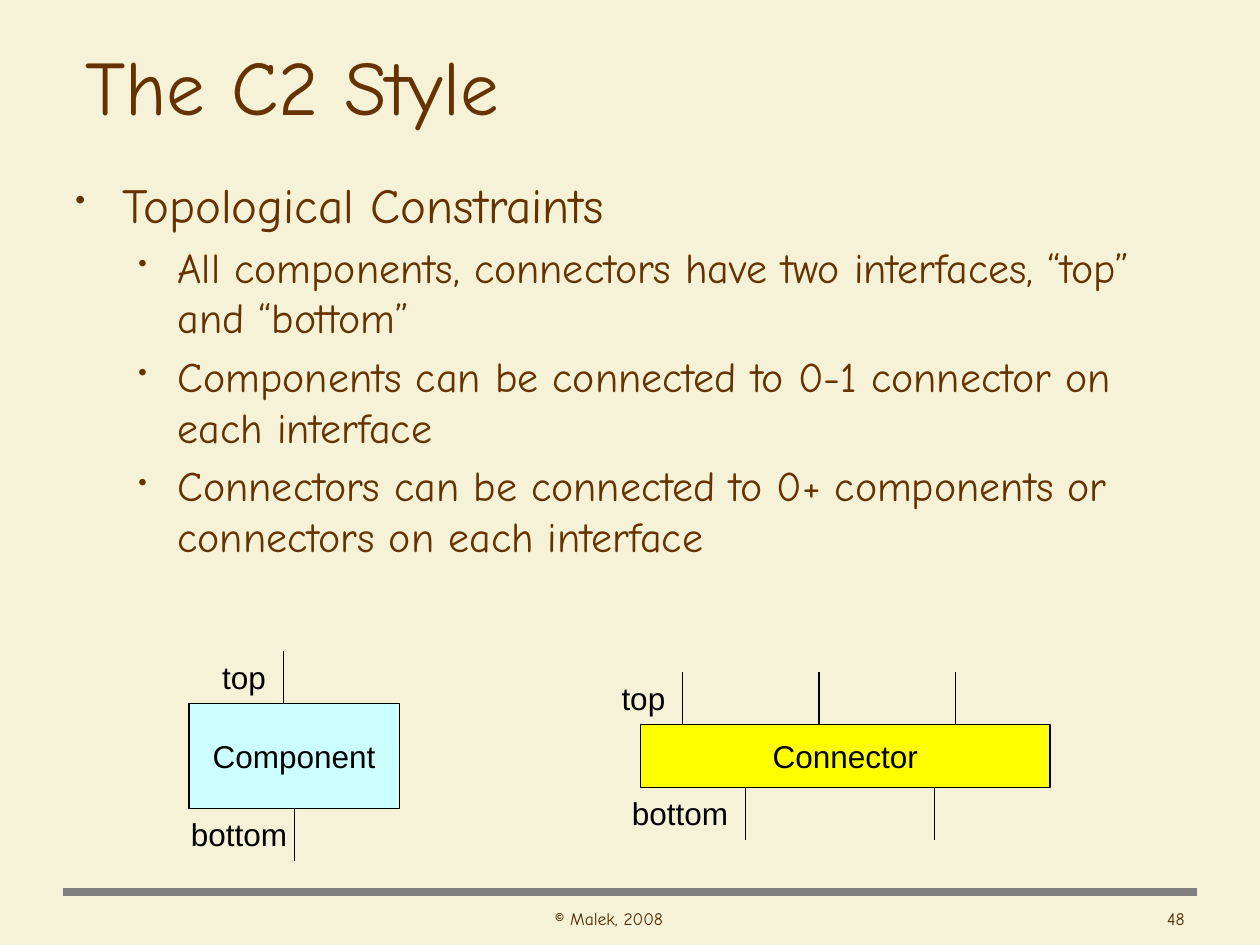
from dataclasses import dataclass

from lxml import etree
from pptx import Presentation
from pptx.dml.color import RGBColor
from pptx.enum.shapes import MSO_CONNECTOR, MSO_SHAPE
from pptx.enum.text import MSO_ANCHOR, PP_ALIGN
from pptx.oxml.ns import qn
from pptx.util import Cm, Pt

STRAIGHT = MSO_CONNECTOR.STRAIGHT
RECTANGLE = MSO_SHAPE.RECTANGLE
TOP, MIDDLE = MSO_ANCHOR.TOP, MSO_ANCHOR.MIDDLE
LEFT, CENTER, RIGHT = PP_ALIGN.LEFT, PP_ALIGN.CENTER, PP_ALIGN.RIGHT

CREAM = RGBColor(0xF5, 0xF2, 0xD8)
BROWN = RGBColor(0x66, 0x33, 0x00)
DARK_BROWN = RGBColor(0x50, 0x28, 0x00)
GRAY = RGBColor(0x80, 0x80, 0x80)
BLACK = RGBColor(0x00, 0x00, 0x00)
PALE_CYAN = RGBColor(0xCC, 0xFF, 0xFF)
YELLOW = RGBColor(0xFF, 0xFF, 0x00)

HAND_FONT = "Comic Neue"
PLAIN_FONT = "Arial"
STUB_LENGTH = 1.06
TOP_SIDE, BOTTOM_SIDE = 0, 2


@dataclass(frozen=True)
class TextStyle:
    size: float
    font: str
    color: RGBColor


@dataclass(frozen=True)
class BulletLevel:
    style: TextStyle
    margin: float
    hanging: float


@dataclass(frozen=True)
class Block:
    """A labelled box with interface stubs; lengths are centimetres."""
    name: str
    left: float
    top: float
    width: float
    height: float
    fill: RGBColor
    top_stubs: tuple[float, ...]
    bottom_stubs: tuple[float, ...]
    top_label_left: float
    bottom_label_left: float


TITLE = TextStyle(44, HAND_FONT, BROWN)
FOOTER = TextStyle(10, HAND_FONT, DARK_BROWN)
LABEL = TextStyle(18, PLAIN_FONT, BLACK)
LEVELS = (
    BulletLevel(TextStyle(28, HAND_FONT, BROWN), 0.95, 0.95),
    BulletLevel(TextStyle(24, HAND_FONT, BROWN), 2.06, 0.79),
)
BULLETS = (
    (0, "Topological Constraints"),
    (1, "All components, connectors have two interfaces, “top” and “bottom”"),
    (1, "Components can be connected to 0-1 connector on each interface"),
    (1, "Connectors can be connected to 0+ components or connectors on each interface"),
)
BLOCKS = (
    Block("Component", 3.81, 14.18, 4.24, 2.12, PALE_CYAN,
          (5.72,), (5.93,), 4.23, 3.6),
    Block("Connector", 12.91, 14.61, 8.26, 1.27, YELLOW,
          (13.76, 16.51, 19.26), (15.03, 18.84), 12.28, 12.49),
)


def add_span(para, text: str, style: TextStyle) -> None:
    span = para.add_run()
    span.text = text
    span.font.size = Pt(style.size)
    span.font.name = style.font
    span.font.color.rgb = style.color


def add_text_box(page, left: float, top: float, width: float, height: float,
                 anchor=TOP):
    box = page.shapes.add_textbox(Cm(left), Cm(top), Cm(width), Cm(height))
    box.text_frame.word_wrap = True
    box.text_frame.vertical_anchor = anchor
    return box.text_frame


def add_text(page, text: str, left: float, top: float, width: float,
             height: float, style: TextStyle, align=LEFT, anchor=TOP) -> None:
    para = add_text_box(page, left, top, width, height, anchor).paragraphs[0]
    para.alignment = align
    add_span(para, text, style)


def add_bullets(page) -> None:
    frame = add_text_box(page, 1.27, 3.39, 22.86, 8.68)
    for index, (depth, text) in enumerate(BULLETS):
        level = LEVELS[depth]
        para = frame.add_paragraph() if index else frame.paragraphs[0]
        para.level = depth
        properties = para._p.get_or_add_pPr()
        properties.set("marL", str(Cm(level.margin)))
        properties.set("indent", str(-Cm(level.hanging)))
        etree.SubElement(properties, qn("a:buSzPct"), val="60000")
        etree.SubElement(properties, qn("a:buChar"), char="•")
        if index:
            para.space_before = Pt(level.style.size * 0.2)
        add_span(para, text, level.style)


def add_line(page, start: tuple[float, float], end: tuple[float, float],
             color: RGBColor, weight: float):
    line = page.shapes.add_connector(
        STRAIGHT, Cm(start[0]), Cm(start[1]), Cm(end[0]), Cm(end[1]))
    line.line.color.rgb = color
    line.line.width = Pt(weight)
    etree.SubElement(line._element.spPr, qn("a:effectLst"))
    return line


def add_block(page, block: Block) -> None:
    box = page.shapes.add_shape(RECTANGLE, Cm(block.left), Cm(block.top),
                                Cm(block.width), Cm(block.height))
    box.shadow.inherit = False
    box.fill.solid()
    box.fill.fore_color.rgb = block.fill
    box.line.color.rgb = BLACK
    box.line.width = Pt(0.75)
    box.text_frame.word_wrap = False
    box.text_frame.vertical_anchor = MIDDLE
    para = box.text_frame.paragraphs[0]
    para.alignment = CENTER
    add_span(para, block.name, LABEL)

    # Interface stubs, joined where they meet the middle of a side
    bottom = block.top + block.height
    center = block.left + block.width / 2
    for stubs, edge, outward, side in (
            (block.top_stubs, block.top, -STUB_LENGTH, TOP_SIDE),
            (block.bottom_stubs, bottom, STUB_LENGTH, BOTTOM_SIDE)):
        for x in stubs:
            stub = add_line(page, (x, edge + outward), (x, edge), BLACK, 0.75)
            if abs(x - center) < 0.01:
                stub.end_connect(box, side)

    # Interface names
    add_text(page, "top", block.top_label_left, block.top - 1.04,
             1.69, 1.02, LABEL)
    add_text(page, "bottom", block.bottom_label_left, bottom,
             2.54, 1.02, LABEL)


def main() -> None:
    deck = Presentation()
    deck.slide_width, deck.slide_height = Cm(25.4), Cm(19.05)
    page = deck.slides.add_slide(deck.slide_layouts[6])
    page.background.fill.solid()
    page.background.fill.fore_color.rgb = CREAM

    # Title and constraints
    add_line(page, (1.27, 17.98), (24.13, 17.98), GRAY, 4.5)
    add_text(page, "The C2 Style", 1.47, 0.64, 22.68, 2.12, TITLE, anchor=MIDDLE)
    add_bullets(page)

    # Component and connector diagrams
    for block in BLOCKS:
        add_block(page, block)

    # Footer
    add_text(page, "© Malek, 2008", 9.31, 18.18, 5.93, 0.85, FOOTER, CENTER)
    add_text(page, "48", 15.24, 18.18, 8.89, 0.85, FOOTER, RIGHT)

    deck.save("out.pptx")


if __name__ == "__main__":
    main()
